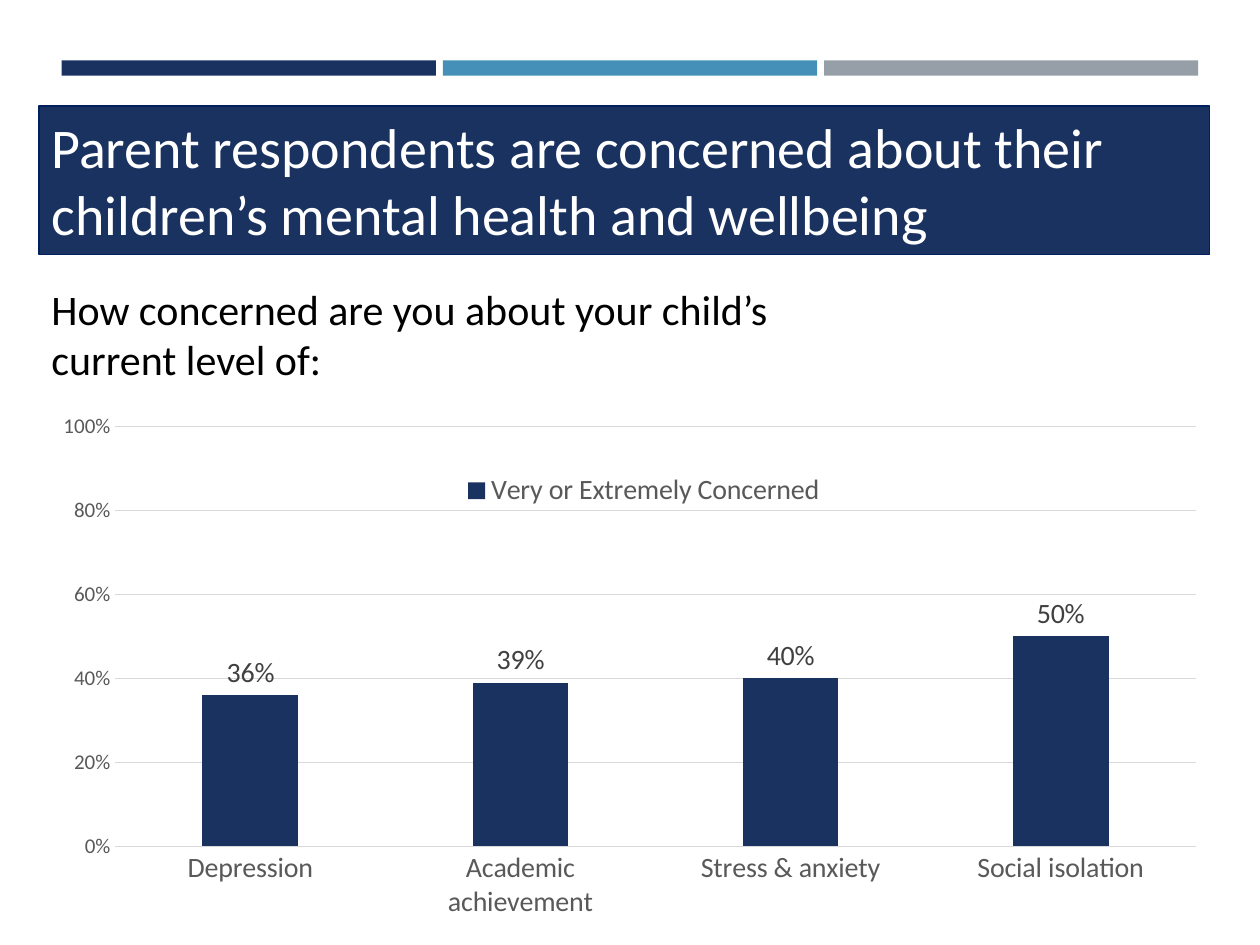
from lxml import etree
from pptx import Presentation, util as u
from pptx.chart.data import CategoryChartData
from pptx.dml.color import RGBColor
from pptx.enum import chart as ch, shapes, text
from pptx.oxml.ns import qn

THEME = {
    "font": "Calibri",
    "navy": "1A3260", "blue": "4590B8", "gray": "969FA7", "border": "002060",
    "white": "FFFFFF", "black": "000000",
    "grid": "D9D9D9", "axis": "595959", "label": "404040",
    "title": 32, "question": 24, "chart": 16, "scale": 12, "hairline": 0.75,
}
LEFT = 0.31


def style(font, size, color):
    font.name = THEME["font"]
    font.size = u.Pt(THEME[size])
    font.bold = False
    font.color.rgb = RGBColor.from_string(THEME[color])


def write(holder, words, size, color):
    frame = holder.text_frame
    frame.word_wrap = True
    frame.vertical_anchor = text.MSO_ANCHOR.TOP
    frame.auto_size = text.MSO_AUTO_SIZE.SHAPE_TO_FIT_TEXT
    paragraph = frame.paragraphs[0]
    paragraph.alignment = text.PP_ALIGN.LEFT
    run = paragraph.add_run()
    run.text = words
    style(run.font, size, color)


deck = Presentation()
deck.slide_width, deck.slide_height = u.Inches(10), u.Inches(7.5)
slide = deck.slides.add_slide(deck.slide_layouts[6])

# Three-colour strip across the top
strip_left, strip_width, strip_step = 0.49, 2.97, 3.025
for column, color in enumerate(("navy", "blue", "gray")):
    band = slide.shapes.add_shape(
        shapes.MSO_SHAPE.RECTANGLE, u.Inches(strip_left + column * strip_step),
        u.Inches(0.48), u.Inches(strip_width), u.Inches(0.12))
    band.shadow.inherit = False
    band.fill.solid()
    band.fill.fore_color.rgb = RGBColor.from_string(THEME[color])
    band.line.fill.background()

# Concern chart
survey = CategoryChartData(number_format="0%")
survey.categories = ["Depression", "Academic achievement",
                     "Stress & anxiety", "Social isolation"]
survey.add_series("Very or Extremely Concerned", (0.36, 0.39, 0.4, 0.5))
concern = slide.shapes.add_chart(
    ch.XL_CHART_TYPE.COLUMN_CLUSTERED, u.Inches(LEFT), u.Inches(3.2),
    u.Inches(9.32), u.Inches(4.63), survey).chart
concern.has_title = False
style(concern.font, "chart", "axis")

columns = concern.plots[0]
columns.gap_width = 182
columns.vary_by_categories = False
bars = columns.series[0]
bars.format.fill.solid()
bars.format.fill.fore_color.rgb = RGBColor.from_string(THEME["navy"])
shares = bars.data_labels
shares.show_value = True
shares.number_format, shares.number_format_is_linked = "0%", False
shares.position = ch.XL_LABEL_POSITION.OUTSIDE_END
style(shares.font, "chart", "label")

# Axes and gridlines
topics, scale = concern.category_axis, concern.value_axis
scale.minimum_scale, scale.maximum_scale, scale.major_unit = 0, 1, 0.2
scale.tick_labels.number_format = "0%"
scale.tick_labels.number_format_is_linked = False
for axis, size in ((topics, "chart"), (scale, "scale")):
    axis.major_tick_mark = axis.minor_tick_mark = ch.XL_TICK_MARK.NONE
    style(axis.tick_labels.font, size, "axis")
scale.format.line.fill.background()
for rule in (topics.format.line, scale.major_gridlines.format.line):
    rule.width = u.Pt(THEME["hairline"])
    rule.color.rgb = RGBColor.from_string(THEME["grid"])

# Legend sits inside the plot; both are placed by shares of the chart area
concern.has_legend = True
legend = concern.legend
legend.position = ch.XL_LEGEND_POSITION.BOTTOM
legend.include_in_layout = False
style(legend.font, "chart", "axis")
plot_area = concern._chartSpace.find(".//" + qn("c:plotArea"))
legend_area = concern._chartSpace.find(".//" + qn("c:legend"))
for area, slot, inner, places in (
        (plot_area, 0, True, (0.065, 0.04, 0.92, 0.72)),
        (legend_area, 1, False, (0.36, 0.11, 0.31, 0.08))):
    for unplaced in area.findall(qn("c:layout")):
        area.remove(unplaced)
    layout = etree.Element(qn("c:layout"))
    manual = etree.SubElement(layout, qn("c:manualLayout"))
    settings = [("layoutTarget", "inner")] if inner else []
    settings += [("xMode", "edge"), ("yMode", "edge"), *zip("xywh", places)]
    for tag, value in settings:
        etree.SubElement(manual, qn("c:" + tag)).set("val", str(value))
    area.insert(slot, layout)

# Survey question
question = slide.shapes.add_textbox(
    u.Inches(LEFT), u.Inches(2.2), u.Inches(6.44), u.Inches(0.91))
write(question, "How concerned are you about your child’s current level of:",
      size="question", color="black")

# Headline panel
headline = slide.shapes.add_shape(
    shapes.MSO_SHAPE.RECTANGLE, u.Inches(LEFT), u.Inches(0.84),
    u.Inches(9.29), u.Inches(1.18))
headline.shadow.inherit = False
headline.fill.solid()
headline.fill.fore_color.rgb = RGBColor.from_string(THEME["navy"])
headline.line.width = u.Pt(THEME["hairline"])
headline.line.color.rgb = RGBColor.from_string(THEME["border"])
write(headline, "Parent respondents are concerned about their "
      "children’s mental health and wellbeing", size="title", color="white")

deck.save("out.pptx")
